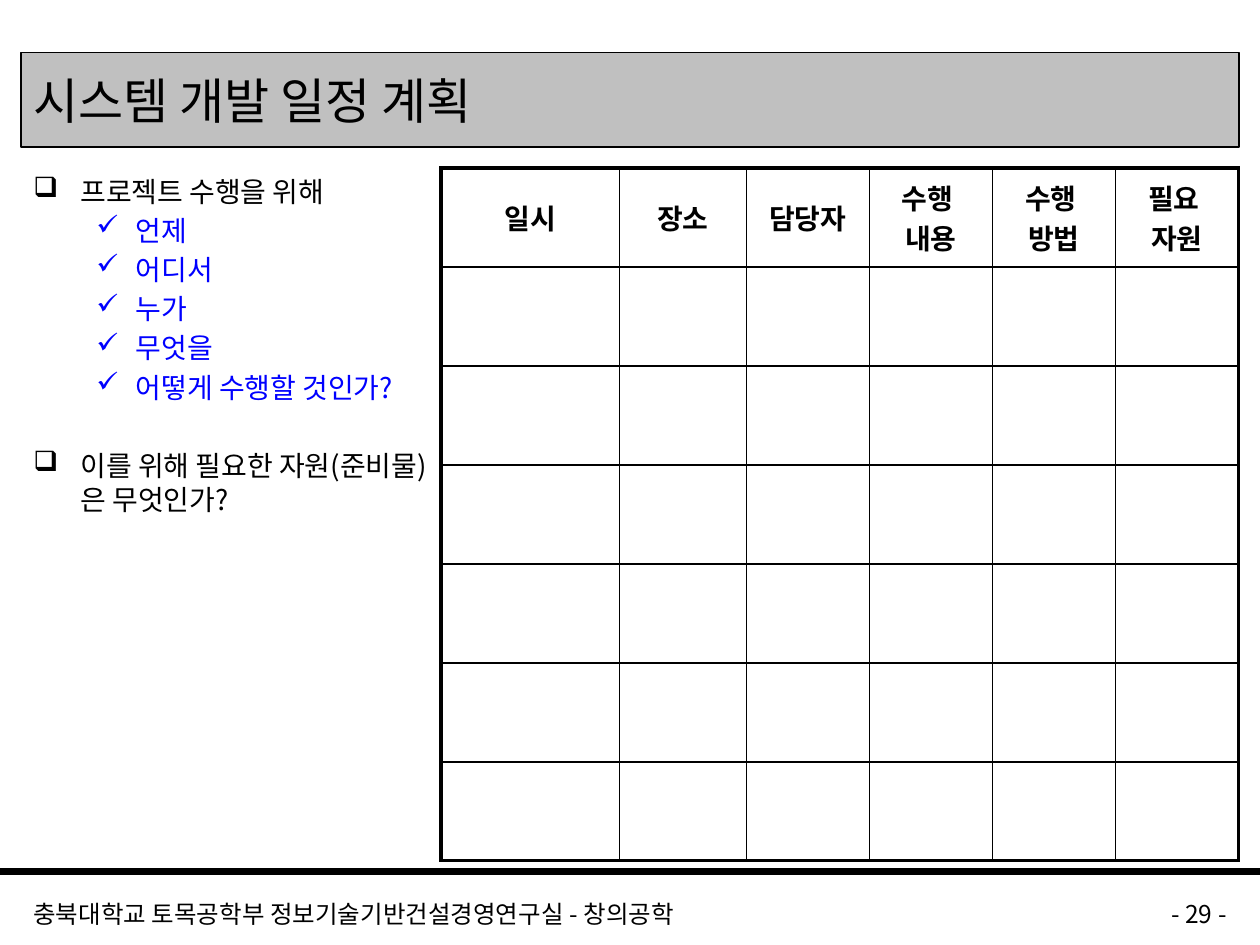
from dataclasses import dataclass

from lxml import etree
from pptx import Presentation
from pptx.dml.color import RGBColor
from pptx.enum.shapes import MSO_CONNECTOR
from pptx.enum.text import MSO_ANCHOR, PP_ALIGN
from pptx.oxml.ns import qn
from pptx.util import Pt

LEFT, CENTER, RIGHT = PP_ALIGN.LEFT, PP_ALIGN.CENTER, PP_ALIGN.RIGHT
MIDDLE = MSO_ANCHOR.MIDDLE
STRAIGHT = MSO_CONNECTOR.STRAIGHT

FONT = "Noto Sans CJK KR"
COLORS = {"ink": "000000", "question": "0000FF", "banner": "C0C0C0"}
BODY_SIZE = 16
LINE_RATIO = 1.2
PARAGRAPH_GAP = 0.2 * BODY_SIZE


@dataclass(frozen=True)
class BulletLevel:
    mark: str
    margin: float
    hanging: float
    color: str


@dataclass(frozen=True)
class Bullet:
    text: str
    level: BulletLevel
    gap: float = PARAGRAPH_GAP


@dataclass(frozen=True)
class FooterText:
    text: str
    left: float
    width: float
    align: PP_ALIGN


TOPIC = BulletLevel("❑", 27, 27, "ink")
QUESTION = BulletLevel("✓", 58.5, 22.5, "question")
BULLETS = [
    Bullet("프로젝트 수행을 위해", TOPIC),
    *(Bullet(text, QUESTION)
      for text in ("언제", "어디서", "누가", "무엇을", "어떻게 수행할 것인가?")),
    Bullet("이를 위해 필요한 자원(준비물)은 무엇인가?", TOPIC,
           BODY_SIZE * LINE_RATIO + 2 * PARAGRAPH_GAP),
]
FOOTERS = [
    FooterText("충북대학교 토목공학부 정보기술기반건설경영연구실 - 창의공학", 12, 564, LEFT),
    FooterText("- 29 -", 588, 120, RIGHT),
]
HEADERS = ["일시", "장소", "담당자", "수행 \v내용", "수행 \v방법", "필요 \v자원"]
COLUMN_WIDTHS = [102, 72.5] + [70.3] * 4
ROW_COUNT = 7
TABLE_LEFT, TABLE_TOP, TABLE_HEIGHT = 252, 96, 396
OUTER_BORDER, INNER_BORDER = 2.25, 1


def rgb(name: str) -> RGBColor:
    return RGBColor.from_string(COLORS[name])


def style_font(paragraph, size: float, color: str = "ink", bold: bool = False) -> None:
    font = paragraph.font
    font.size, font.bold, font.name = Pt(size), bold, FONT
    font.color.rgb = rgb(color)
    defaults = paragraph._p.pPr.find(qn("a:defRPr"))
    etree.SubElement(defaults, qn("a:ea"), typeface=FONT)


def add_text_frame(slide, left: float, top: float, width: float, height: float):
    frame = slide.shapes.add_textbox(Pt(left), Pt(top), Pt(width), Pt(height)).text_frame
    frame.word_wrap = True
    return frame


def add_bullet(paragraph, bullet: Bullet) -> None:
    level = bullet.level
    paragraph.text = bullet.text
    paragraph.line_spacing = Pt(BODY_SIZE * LINE_RATIO)
    paragraph.space_before = Pt(bullet.gap)
    properties = paragraph._p.get_or_add_pPr()
    properties.set("marL", str(Pt(level.margin)))
    properties.set("indent", str(-Pt(level.hanging)))
    etree.SubElement(properties, qn("a:buChar"), char=level.mark)
    style_font(paragraph, BODY_SIZE, level.color)


def add_footer(slide, footer: FooterText) -> None:
    paragraph = add_text_frame(slide, footer.left, 510, footer.width, 18).paragraphs[0]
    paragraph.text = footer.text
    paragraph.alignment = footer.align
    paragraph.line_spacing = Pt(14 * LINE_RATIO)
    style_font(paragraph, 14)


def set_borders(cell, widths: dict[str, float]) -> None:
    properties = cell._tc.get_or_add_tcPr()
    for side, width in widths.items():
        border = etree.SubElement(properties, qn(f"a:ln{side}"), w=str(Pt(width)))
        fill = etree.SubElement(border, qn("a:solidFill"))
        etree.SubElement(fill, qn("a:srgbClr"), val=COLORS["ink"])


def add_schedule(slide) -> None:
    last_row, last_column = ROW_COUNT - 1, len(HEADERS) - 1
    table = slide.shapes.add_table(
        ROW_COUNT, len(HEADERS), Pt(TABLE_LEFT), Pt(TABLE_TOP),
        Pt(sum(COLUMN_WIDTHS)), Pt(TABLE_HEIGHT)).table
    table.first_row = table.horz_banding = False
    for column, width in zip(table.columns, COLUMN_WIDTHS):
        column.width = Pt(width)
    for r, row in enumerate(table.rows):
        row.height = Pt(TABLE_HEIGHT / ROW_COUNT)
        for c, cell in enumerate(row.cells):
            on_edge = {"L": c == 0, "R": c == last_column,
                       "T": r == 0, "B": r == last_row}
            set_borders(cell, {side: OUTER_BORDER if outer else INNER_BORDER
                               for side, outer in on_edge.items()})
            cell.fill.background()
    for cell, header in zip(table.rows[0].cells, HEADERS):
        cell.vertical_anchor = MIDDLE
        paragraph = cell.text_frame.paragraphs[0]
        paragraph.text = header
        paragraph.alignment = CENTER
        paragraph.space_before = Pt(PARAGRAPH_GAP)
        style_font(paragraph, BODY_SIZE, bold=True)


def main() -> None:
    presentation = Presentation()
    presentation.slide_width, presentation.slide_height = Pt(720), Pt(540)
    slide = presentation.slides.add_slide(presentation.slide_layouts[5])

    # Title banner
    title = slide.shapes.title
    title.left, title.top, title.width, title.height = Pt(12), Pt(30), Pt(696), Pt(54)
    title.fill.solid()
    title.fill.fore_color.rgb = rgb("banner")
    title.line.color.rgb = rgb("ink")
    title.line.width = Pt(0.75)
    title.text_frame.vertical_anchor = MIDDLE
    heading = title.text_frame.paragraphs[0]
    heading.text = "시스템 개발 일정 계획"
    heading.alignment = LEFT
    style_font(heading, 28)

    # Footer rule and texts
    rule = slide.shapes.add_connector(STRAIGHT, Pt(0), Pt(498), Pt(720), Pt(498))
    rule.line.color.rgb = rgb("ink")
    rule.line.width = Pt(4.5)
    etree.SubElement(rule._element.spPr, qn("a:effectLst"))
    for footer in FOOTERS:
        add_footer(slide, footer)

    # Planning questions
    questions = add_text_frame(slide, 12, 96, 240, 390)
    for index, bullet in enumerate(BULLETS):
        paragraph = questions.add_paragraph() if index else questions.paragraphs[0]
        add_bullet(paragraph, bullet)

    # Schedule table
    add_schedule(slide)

    presentation.save("out.pptx")


if __name__ == "__main__":
    main()
